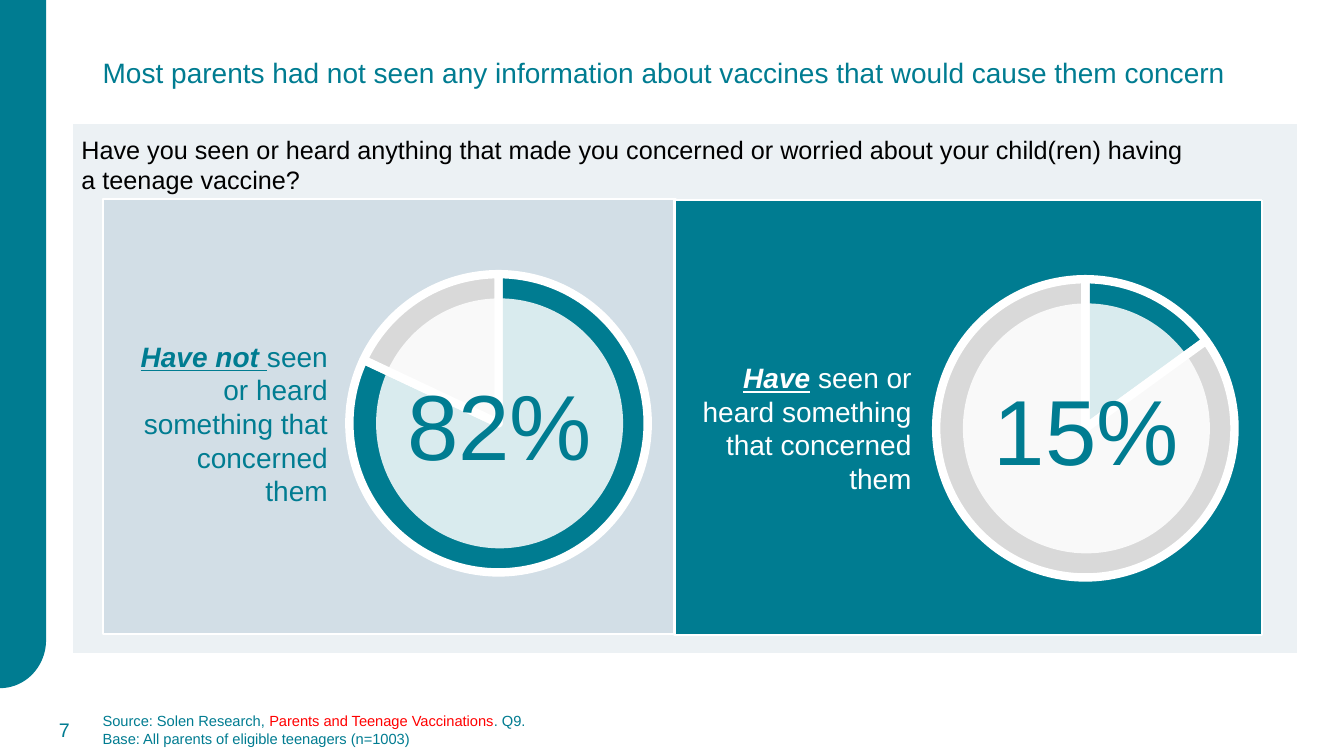
from math import cos, pi, sin

from lxml.etree import SubElement
from pptx import Presentation
from pptx.chart.data import CategoryChartData
from pptx.dml.color import RGBColor
from pptx.enum.chart import XL_CHART_TYPE as ChartType
from pptx.enum.shapes import MSO_SHAPE as Preset
from pptx.enum.text import MSO_ANCHOR as Anchor, PP_ALIGN as Align
from pptx.oxml import parse_xml
from pptx.oxml.ns import nsdecls, qn
from pptx.util import Emu, Pt

TEAL, WHITE, BLACK, RED = "007C91", "FFFFFF", "000000", "FF0000"
GREY, MIST, STEEL = "D9D9D9", "ECF1F4", "D2DEE6"
FONT = "Arial"
EMU_PER_PX = 9144


def px(length):
    return Emu(round(length * EMU_PER_PX))


def color(value):
    return RGBColor.from_string(value)


def style(shape, fill, line=None, width=1.5):
    shape.shadow.inherit = False
    shape.fill.solid()
    shape.fill.fore_color.rgb = color(fill)
    if line:
        shape.line.color.rgb = color(line)
        shape.line.width = Pt(width)
    else:
        shape.line.fill.background()


def add_panel(page, box, fill):
    panel = page.shapes.add_shape(Preset.RECTANGLE, *map(px, box))
    style(panel, fill, WHITE)


def write(frame, lines, size, tint, align=Align.LEFT, anchor=Anchor.MIDDLE):
    frame.word_wrap = True
    frame.vertical_anchor = anchor
    for index, line in enumerate(lines):
        para = frame.paragraphs[0] if index == 0 else frame.add_paragraph()
        para.alignment = align
        para.font.name = FONT
        para.font.size = Pt(size)
        para.font.color.rgb = color(tint)
        for text in line:
            para.add_run().text = text


def add_text(page, box, lines, size, tint, **options):
    frame = page.shapes.add_textbox(*map(px, box)).text_frame
    write(frame, lines, size, tint, **options)
    return frame


def add_side_bar(page, box):
    left, top, width, height = box
    radius = 47
    bend = top + height - radius
    angles = [step * pi / 48 for step in range(25)]
    curve = [(left + width * cos(a), bend + radius * sin(a)) for a in angles]
    outline = page.shapes.build_freeform(px(left), px(top))
    outline.add_line_segments(
        [(px(x), px(y)) for x, y in [(left + width, top), *curve]])
    style(outline.convert_to_shape(), TEAL, TEAL, 1)


def add_pie(page, box, share):
    left, top, width, height = box
    diameter = 296
    data = CategoryChartData()
    data.categories = ["1", "2"]
    data.add_series("Series 1", [share, 100 - share])
    chart = page.shapes.add_chart(ChartType.PIE, *map(px, box), data).chart
    chart.has_legend = False
    chart.has_title = False
    chart.font.name = FONT
    chart.font.size = Pt(10)
    chart.font.color.rgb = color(BLACK)
    plot = chart.plots[0]
    plot.vary_by_categories = True
    for index, tint in enumerate([TEAL, GREY]):
        slice_format = plot.series[0].points[index].format
        slice_format.fill.solid()
        slice_format.fill.fore_color.rgb = color(tint)
        slice_format.line.color.rgb = color(WHITE)
        slice_format.line.width = Pt(6)

    across, down = diameter / width, diameter / height
    settings = {"layoutTarget": "inner", "xMode": "edge", "yMode": "edge",
                "x": (1 - across) / 2, "y": (1 - down) / 2,
                "w": across, "h": down}
    layout = parse_xml(f'<c:layout {nsdecls("c")}><c:manualLayout/></c:layout>')
    for name, value in settings.items():
        SubElement(layout[0], qn(f"c:{name}")).set("val", str(value))
    area = chart.element.find(".//" + qn("c:plotArea"))
    for old in area.findall(qn("c:layout")):
        area.remove(old)
    area.insert(0, layout)

    disc = page.shapes.add_shape(
        Preset.OVAL, px(left + 60), px(top + 38), px(245), px(248))
    style(disc, WHITE)
    tone = disc.fill._xPr.find(".//" + qn("a:srgbClr"))
    SubElement(tone, qn("a:alpha")).set("val", "85000")
    frame = disc.text_frame
    frame.margin_left = frame.margin_right = 0
    frame.margin_top = frame.margin_bottom = 0
    write(frame, [[f"{share}%"]], 66, TEAL, align=Align.CENTER)
    frame.word_wrap = False


def add_answer(page, box, fill, tint, share, words, caption_size, pie_offset):
    left, top, _, _ = box
    pie_left, pie_top = left + pie_offset[0], top + pie_offset[1]
    pie_width, pie_height = 363, 324
    width, height = caption_size
    add_panel(page, box, fill)
    caption_top = pie_top + (pie_height - height) // 2
    caption = add_text(page, (left + 16, caption_top, width, height),
                       [words], 20, tint, align=Align.RIGHT)
    lead = caption.paragraphs[0].runs[0].font
    lead.bold = lead.italic = lead.underline = True
    add_pie(page, (pie_left, pie_top, pie_width, pie_height), share)


def add_survey(page, box):
    left, top, _, _ = box
    add_panel(page, box, MIST)
    add_answer(page, (left + 31, top + 75, 568, 432), STEEL, TEAL, 82,
               ["Have not ", "seen or heard something that concerned them"],
               (217, 178), (211, 61))
    add_answer(page, (left + 598, top + 76, 583, 432), TEAL, WHITE, 15,
               ["Have", " seen or heard something that concerned them"],
               (229, 145), (226, 65))
    question = ("Have you seen or heard anything that made you concerned or "
                "worried about your child(ren) having a teenage vaccine?")
    add_text(page, (left, top + 6, 1130, 71), [[question]], 18, BLACK,
             anchor=Anchor.TOP)


def add_title(page, box):
    title = add_text(
        page, box, [["Most parents had not seen any information about "
                     "vaccines that would cause them concern"]], 20, TEAL)
    title.paragraphs[0].line_spacing = 0.9


def add_footer(page, box):
    left, top, width, height = box
    add_text(page, (left, top, 65, height), [["7"]], 14, TEAL,
             align=Align.RIGHT)
    source = add_text(
        page, (left + 78, top, width - 78, height),
        [["Source: Solen Research, ", "Parents and Teenage Vaccinations",
          ". Q9."],
         ["Base: All parents of eligible teenagers (n=1003)"]], 10.5, TEAL)
    source.paragraphs[0].runs[1].font.color.rgb = color(RED)


def main():
    deck = Presentation()
    deck.slide_width, deck.slide_height = px(1333), px(750)
    page = deck.slides.add_slide(deck.slide_layouts[6])
    add_side_bar(page, (0, 0, 45, 682))
    add_title(page, (92, 1, 1150, 145))
    add_survey(page, (71, 122, 1217, 527))
    add_footer(page, (14, 704, 1238, 40))
    deck.save("out.pptx")


if __name__ == "__main__":
    main()
